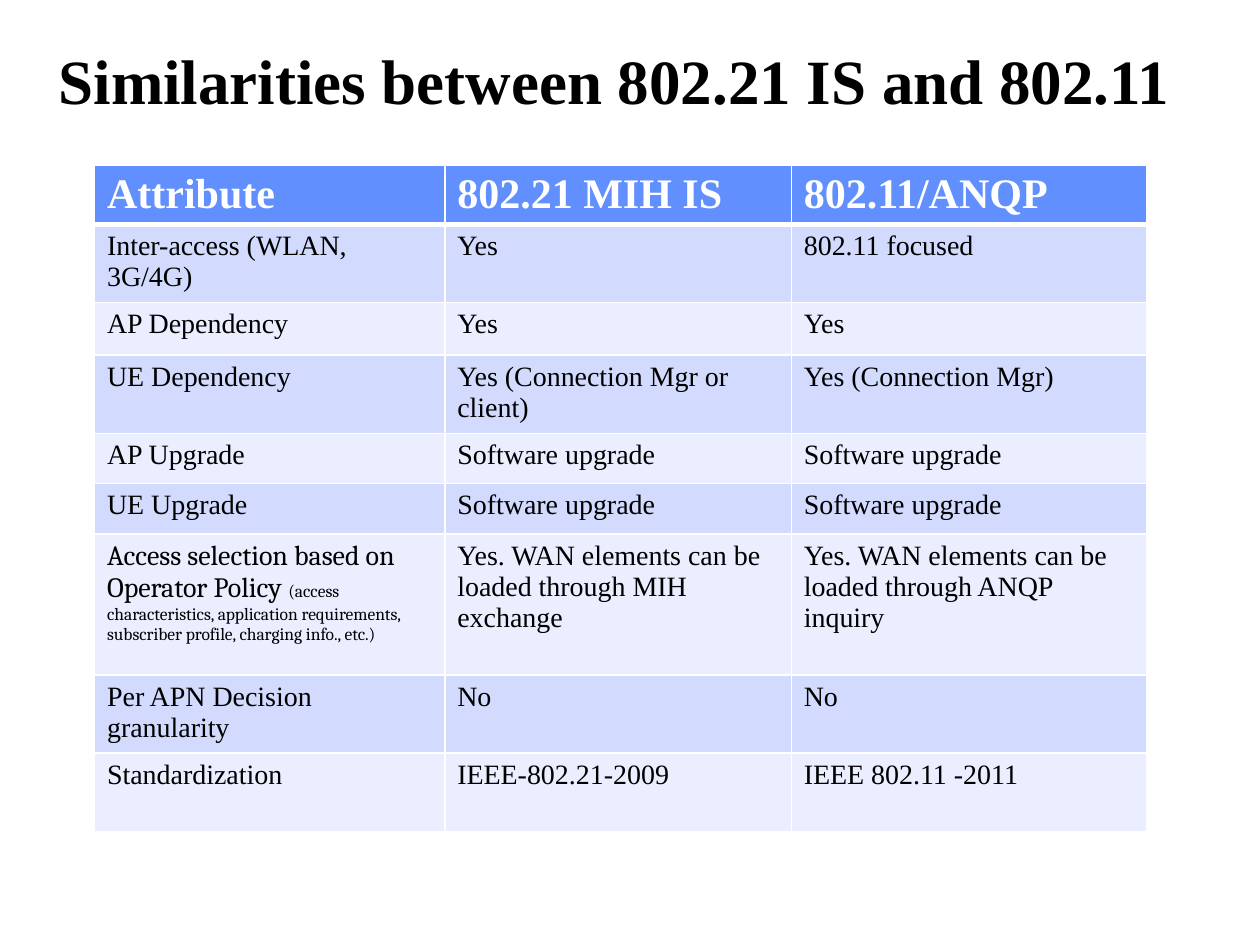
from lxml.etree import SubElement
from pptx import Presentation
from pptx.dml.color import RGBColor
from pptx.enum.text import MSO_ANCHOR, MSO_AUTO_SIZE, PP_ALIGN
from pptx.oxml.ns import qn
from pptx.util import Inches, Pt

COLORS = {"header": "618FFD", "odd": "D2DBFE", "even": "EAEEFF",
          "white": "FFFFFF", "black": "000000"}
SERIF = "Times New Roman"
COLUMNS = [2.78, 2.75, 2.82]
HEIGHTS = [0.47, 0.62, 0.42, 0.62, 0.4, 0.4, 1.12, 0.62, 0.62]
POLICY = [
    ("Access selection based on Operator Policy ", 16, "Cambria"),
    ("(access characteristics, application requirements, "
     "subscriber profile, charging info., etc.)", 10, "Cambria"),
]
ROWS = [
    ["Attribute", "802.21 MIH IS", "802.11/ANQP"],
    ["Inter-access (WLAN, 3G/4G)", "Yes", "802.11 focused"],
    ["AP Dependency", "Yes", "Yes"],
    ["UE Dependency", "Yes (Connection Mgr or client)", "Yes (Connection Mgr)"],
    ["AP Upgrade", "Software upgrade", "Software upgrade"],
    ["UE Upgrade", "Software upgrade", "Software upgrade"],
    [POLICY, "Yes. WAN elements can be loaded through MIH exchange",
     "Yes. WAN elements can be loaded through ANQP inquiry"],
    ["Per APN Decision granularity", "No", "No"],
    ["Standardization", "IEEE-802.21-2009", "IEEE 802.11 -2011"],
]


def add_run(p, text, size, font=SERIF, color="black", bold=False):
    """Append one formatted run to a paragraph."""
    r = p.add_run()
    r.text = text
    r.font.size = Pt(size)
    r.font.name = font
    r.font.bold = bold
    r.font.color.rgb = RGBColor.from_string(COLORS[color])


def set_borders(cell, top, bottom):
    """Draw white cell borders, with given top and bottom widths in points."""
    tc_pr = cell._tc.get_or_add_tcPr()
    widths = {"a:lnL": 1, "a:lnR": 1, "a:lnT": top, "a:lnB": bottom}
    for i, (tag, width) in enumerate(widths.items()):
        ln = SubElement(tc_pr, qn(tag), w=str(Pt(width)))
        fill = SubElement(ln, qn("a:solidFill"))
        SubElement(fill, qn("a:srgbClr"), val=COLORS["white"])
        tc_pr.insert(i, ln)


def fill_cell(cell, content, row):
    """Write and format one table cell according to its row."""
    header = row == 0
    fill = "header" if header else "odd" if row % 2 else "even"
    cell.fill.solid()
    cell.fill.fore_color.rgb = RGBColor.from_string(COLORS[fill])
    set_borders(cell, 3 if row == 1 else 1, 3 if header else 1)
    p = cell.text_frame.paragraphs[0]
    if header:
        add_run(p, content, 24, color="white", bold=True)
        return
    runs = [(content, 16, SERIF)] if isinstance(content, str) else content
    for text, size, font in runs:
        add_run(p, text, size, font)


def add_title(s, text, left, top, width, height):
    """Place the slide title in the given box."""
    sp = s.shapes.title
    sp.left, sp.top, sp.width, sp.height = left, top, width, height
    tf = sp.text_frame
    tf.word_wrap = True
    tf.auto_size = MSO_AUTO_SIZE.NONE
    tf.vertical_anchor = MSO_ANCHOR.MIDDLE
    p = tf.paragraphs[0]
    p.alignment = PP_ALIGN.CENTER
    p.line_spacing = 0.9
    add_run(p, text, 36, bold=True)


def add_comparison(s, left, top, width, height):
    """Place the comparison table in the given box."""
    table = s.shapes.add_table(len(ROWS), len(COLUMNS),
                               left, top, width, height).table
    for column, size in zip(table.columns, COLUMNS):
        column.width = Inches(size)
    for i, (row, size) in enumerate(zip(ROWS, HEIGHTS)):
        table.rows[i].height = Inches(size)
        for j, content in enumerate(row):
            fill_cell(table.cell(i, j), content, i)


def main():
    """Build the slide and save it."""
    prs = Presentation()
    prs.slide_width, prs.slide_height = Inches(10), Inches(7.5)
    s = prs.slides.add_slide(prs.slide_layouts[5])
    add_comparison(s, Inches(0.75), Inches(1.31),
                   Inches(sum(COLUMNS)), Inches(sum(HEIGHTS)))
    add_title(s, "Similarities between 802.21 IS and 802.11",
              Inches(0.35), Inches(0.21), Inches(9.05), Inches(0.91))
    prs.save("out.pptx")


if __name__ == "__main__":
    main()
